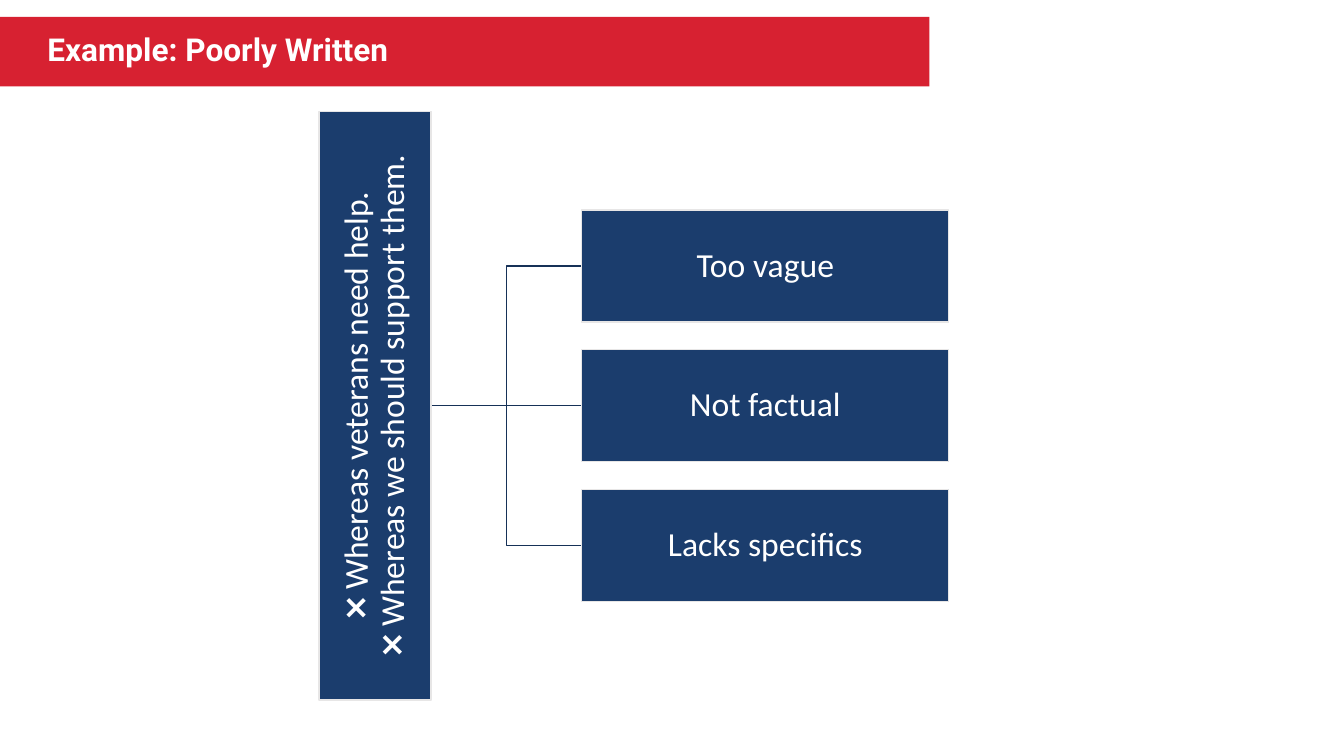
from lxml import etree
from pptx import Presentation, util as u
from pptx.dml.color import RGBColor
from pptx.enum import shapes, text
from pptx.oxml.ns import qn

RED = RGBColor(0xD7, 0x21, 0x31)
NAVY = RGBColor(0x1B, 0x3D, 0x6D)
DARK_NAVY = RGBColor(0x16, 0x31, 0x57)
PALE_GREY = RGBColor(0xE7, 0xE6, 0xE6)
WHITE = RGBColor(0xFF, 0xFF, 0xFF)

WIDTH, HEIGHT = u.Inches(13.33), u.Inches(7.5)
COLUMN, ROW = WIDTH / 100, HEIGHT / 100

MIDDLE_ROW, ROW_PITCH = 53.67, 18.47
BOX_ROWS = 14.8
REASON_COLUMNS, REASON_CENTRE = 27.31, 56.94
STATEMENT_COLUMNS, STATEMENT_CENTRE = 43.81, 27.91
TRUNK_START = 32.11
REASON_EDGE = REASON_CENTRE - REASON_COLUMNS / 2

STATEMENT = "❌ Whereas veterans need help.\n❌ Whereas we should support them."
REASONS = ["Too vague", "Not factual", "Lacks specifics"]

BANNER_FONT = {"name": "Roboto", "size": u.Pt(22.5), "bold": True}
BOX_FONT = {"name": "Calibri", "size": u.Pt(24), "bold": False}


def apply_format(target, values):
    for name, value in values.items():
        setattr(target, name, value)


def add_box(page, centre, size, fill, wording, font, align, inset, outline=None):
    left, top = centre[0] - size[0] / 2, centre[1] - size[1] / 2
    box = page.shapes.add_shape(
        shapes.MSO_SHAPE.RECTANGLE,
        round(left * COLUMN), round(top * ROW),
        round(size[0] * COLUMN), round(size[1] * ROW),
    )
    box.shadow.inherit = False
    box.fill.solid()
    box.fill.fore_color.rgb = fill
    if outline is None:
        box.line.fill.background()
    else:
        box.line.color.rgb = outline
        box.line.width = u.Pt(1)
    frame = box.text_frame
    apply_format(frame, {
        "word_wrap": True,
        "vertical_anchor": text.MSO_ANCHOR.MIDDLE,
        "margin_left": inset, "margin_right": inset,
        "margin_top": u.Inches(0.02), "margin_bottom": u.Inches(0.02),
    })
    para = frame.paragraphs[0]
    para.text = wording
    apply_format(para, {"alignment": align, "line_spacing": 0.9})
    for span in para.runs:
        apply_format(span.font, font)
        span.font.color.rgb = WHITE
    return box


def add_banner(page, wording):
    add_box(page, (34.58, 6.83), (69.15, 9.2), RED, wording, BANNER_FONT,
            text.PP_ALIGN.LEFT, u.Inches(0.47))


def add_navy_box(page, centre, columns, wording):
    return add_box(page, centre, (columns, BOX_ROWS), NAVY, wording, BOX_FONT,
                   text.PP_ALIGN.CENTER, u.Inches(0.02), PALE_GREY)


def add_branch(page, row):
    straight = row == MIDDLE_ROW
    kind = shapes.MSO_CONNECTOR.STRAIGHT if straight else shapes.MSO_CONNECTOR.ELBOW
    branch = page.shapes.add_connector(
        kind,
        round(TRUNK_START * COLUMN), round(MIDDLE_ROW * ROW),
        round(REASON_EDGE * COLUMN), round(row * ROW),
    )
    branch.line.color.rgb = DARK_NAVY
    branch.line.width = u.Pt(1)
    etree.SubElement(branch._element.spPr, qn("a:effectLst"))


def main():
    deck = Presentation()
    apply_format(deck, {"slide_width": WIDTH, "slide_height": HEIGHT})
    page = deck.slides.add_slide(deck.slide_layouts[6])
    add_banner(page, "Example: Poorly Written")
    rows = [MIDDLE_ROW + step * ROW_PITCH for step in (-1, 0, 1)]
    for row in rows:
        add_branch(page, row)
    statement = add_navy_box(page, (STATEMENT_CENTRE, MIDDLE_ROW),
                             STATEMENT_COLUMNS, STATEMENT)
    statement.rotation = 270
    for row, reason in zip(rows, REASONS):
        add_navy_box(page, (REASON_CENTRE, row), REASON_COLUMNS, reason)
    deck.save("out.pptx")


if __name__ == "__main__":
    main()
